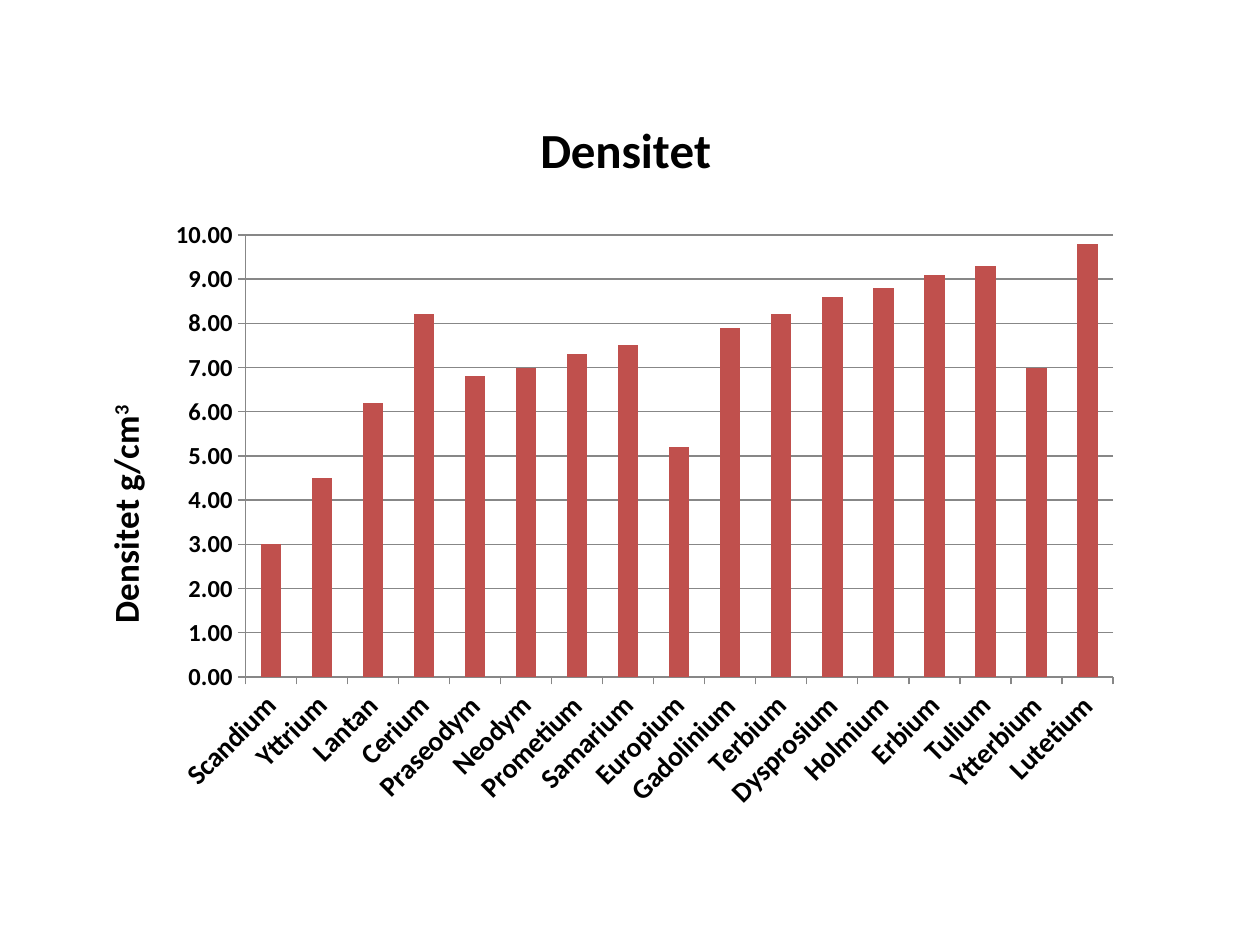
"""Build a slide with a column chart of the densities of the rare earth metals."""
import pptx
import pptx.chart.data
import pptx.dml.color
import pptx.enum.chart
import pptx.oxml
import pptx.oxml.ns
import pptx.util

Pt = pptx.util.Pt
TITLE = "Densitet"
AXIS_TITLE = ("Densitet g/cm", "3")
DENSITIES = {
    "Scandium": 3, "Yttrium": 4.5, "Lantan": 6.2, "Cerium": 8.2,
    "Praseodym": 6.8, "Neodym": 7, "Prometium": 7.3, "Samarium": 7.5,
    "Europium": 5.2, "Gadolinium": 7.9, "Terbium": 8.2, "Dysprosium": 8.6,
    "Holmium": 8.8, "Erbium": 9.1, "Tulium": 9.3, "Ytterbium": 7,
    "Lutetium": 9.8,
}
CHART_BOX = (54, 49, 607, 430.5)
PLOT_AREA = {"x": 0.142, "y": 0.198, "w": 0.817, "h": 0.587}
BAR, RULE, INK = "C0504D", "878787", "000000"
VALUE_SCALE = {"minimum_scale": 0, "maximum_scale": 10, "major_unit": 1,
               "has_major_gridlines": True}


def rgb(value):
    return pptx.dml.color.RGBColor.from_string(value)


def style(target, **values):
    for name, value in values.items():
        setattr(target, name, value)


def set_font(font, size, bold=True):
    style(font, name="Calibri", size=Pt(size), bold=bold)
    font.color.rgb = rgb(INK)


def set_line(line):
    line.color.rgb = rgb(RULE)
    line.width = Pt(0.75)


def add_title(owner, size, *texts):
    p = owner.text_frame.paragraphs[0]
    for text in texts:
        r = p.add_run()
        r.text = text
        set_font(r.font, size)
    return p.runs


def place_plot(chart):
    ns = pptx.oxml.ns.nsdecls("c")
    modes = '<c:layoutTarget val="inner"/><c:xMode val="edge"/><c:yMode val="edge"/>'
    sizes = "".join(f'<c:{k} val="{v}"/>' for k, v in PLOT_AREA.items())
    plot_area = chart._chartSpace.chart.plotArea
    for old in plot_area.findall(pptx.oxml.ns.qn("c:layout")):
        plot_area.remove(old)
    plot_area.insert(0, pptx.oxml.parse_xml(
        f"<c:layout {ns}><c:manualLayout>{modes}{sizes}</c:manualLayout></c:layout>"))


def add_density_chart(s):
    data = pptx.chart.data.CategoryChartData(number_format="0.00")
    data.categories = list(DENSITIES)
    data.add_series(TITLE, list(DENSITIES.values()))
    kind = pptx.enum.chart.XL_CHART_TYPE.COLUMN_CLUSTERED
    chart = s.shapes.add_chart(kind, *map(Pt, CHART_BOX), data).chart
    set_font(chart.font, 10, False)
    style(chart, has_legend=False, has_title=True)
    chart.chart_title.include_in_layout = False
    add_title(chart.chart_title, 28, TITLE)
    place_plot(chart)

    plot = chart.plots[0]
    style(plot, gap_width=150, vary_by_categories=False)
    fill = plot.series[0].format.fill
    fill.solid()
    fill.fore_color.rgb = rgb(BAR)

    cat, val = chart.category_axis, chart.value_axis
    for axis, size in ((cat, 16), (val, 14)):
        axis.major_tick_mark = pptx.enum.chart.XL_TICK_MARK.OUTSIDE
        set_font(axis.tick_labels.font, size)
        set_line(axis.format.line)
    cat._element.txPr.bodyPr.set("rot", "-2700000")
    style(val, **VALUE_SCALE)
    style(val.tick_labels, number_format="0.00", number_format_is_linked=False)
    set_line(val.major_gridlines.format.line)
    val.has_title = True
    power = add_title(val.axis_title, 20, *AXIS_TITLE)[-1]
    power._r.get_or_add_rPr().set("baseline", "30000")
    body = val.axis_title.text_frame._txBody.bodyPr
    body.set("rot", "-5400000")
    body.set("vert", "horz")


def main():
    prs = pptx.Presentation()
    style(prs, slide_width=Pt(720), slide_height=Pt(540))
    add_density_chart(prs.slides.add_slide(prs.slide_layouts[6]))
    prs.save("out.pptx")


if __name__ == "__main__":
    main()
